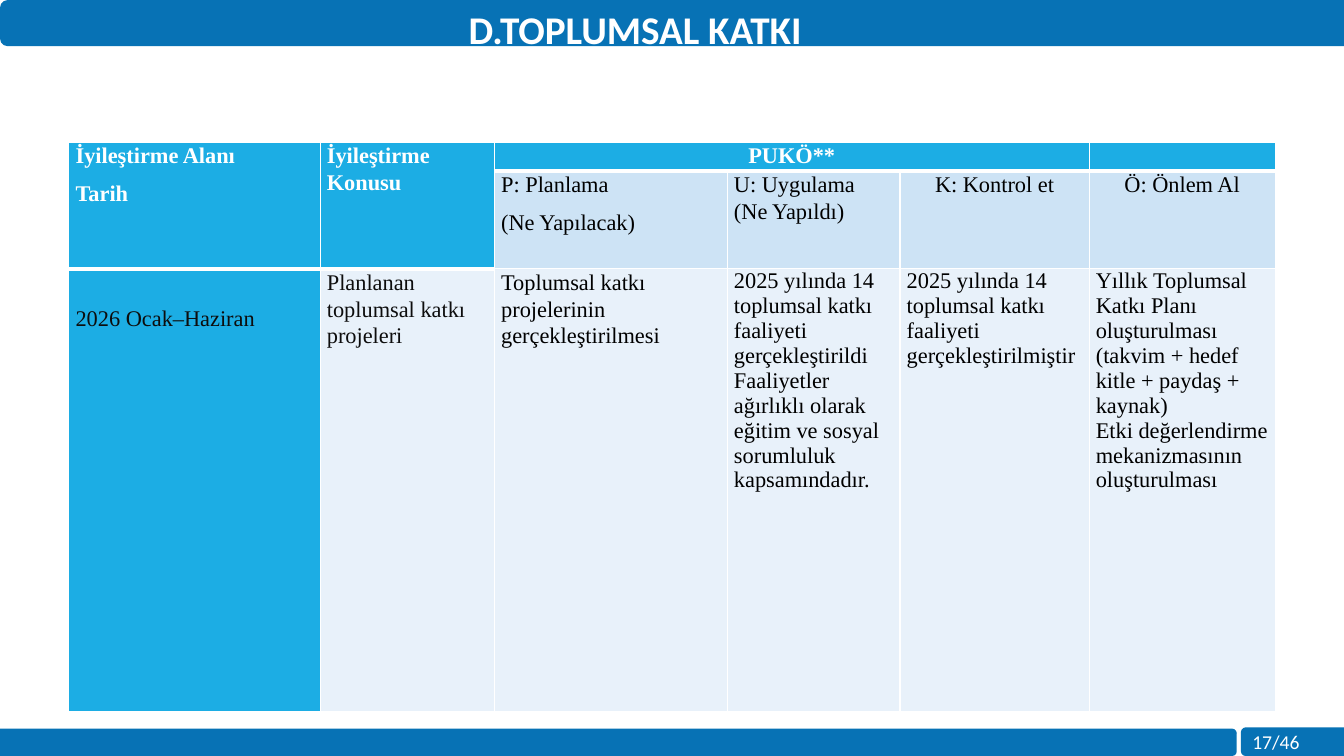
from lxml.etree import SubElement
from pptx import Presentation
from pptx.dml.color import RGBColor
from pptx.enum.shapes import MSO_SHAPE as Shape
from pptx.enum.text import MSO_ANCHOR as Anchor, MSO_AUTO_SIZE as AutoSize, PP_ALIGN as Align
from pptx.oxml.ns import qn
from pptx.util import Pt

COLORS = {"bar": "0772B5", "header": "1CADE4", "stage": "CDE3F5", "body": "E8F1FA",
          "white": "FFFFFF", "black": "000000", "date": "0D0D0D"}
COLUMN_WIDTHS = [179.5, 124.5, 166.3, 123.4, 135.1, 132.9]
ROW_HEIGHTS = [19.6, 70, 316]
PLAN = [
    [["İyileştirme Alanı", "Tarih"], ["İyileştirme Konusu"], ["PUKÖ**"], [], [], []],
    [[], [], ["P: Planlama", "(Ne Yapılacak)"], ["U: Uygulama (Ne Yapıldı)"],
     ["K: Kontrol et"], ["Ö: Önlem Al"]],
    [["2026 Ocak–Haziran"], ["Planlanan toplumsal katkı projeleri"],
     ["Toplumsal katkı projelerinin gerçekleştirilmesi"],
     ["2025 yılında 14 toplumsal katkı faaliyeti gerçekleştirildi",
      "Faaliyetler ağırlıklı olarak eğitim ve sosyal sorumluluk kapsamındadır."],
     ["2025 yılında 14 toplumsal katkı faaliyeti gerçekleştirilmiştir"],
     ["Yıllık Toplumsal Katkı Planı oluşturulması (takvim + hedef kitle + paydaş + kaynak)",
      "Etki değerlendirme mekanizmasının oluşturulması"]],
]
ALIGNMENTS = {(0, 0): Align.JUSTIFY, (0, 2): Align.CENTER,
              (1, 4): Align.CENTER, (1, 5): Align.CENTER}


def rgb(name):
    """Return the named colour."""
    return RGBColor.from_string(COLORS[name])


def style_runs(paragraph, font_name, size, color, bold=False):
    """Format every run of a paragraph."""
    for run in paragraph.runs:
        run.font.name, run.font.size, run.font.bold = font_name, Pt(size), bold
        run.font.color.rgb = rgb(color)


def add_bar(slide, left, top, width, height, rotation):
    """Add a bar rounded on the right at 90 degrees or on the left at 270."""
    bar = slide.shapes.add_shape(
        Shape.ROUND_2_SAME_RECTANGLE, Pt(left + (width - height) / 2),
        Pt(top + (height - width) / 2), Pt(height), Pt(width))
    bar.rotation = rotation
    bar.shadow.inherit = False
    bar.fill.solid()
    bar.fill.fore_color.rgb = rgb("bar")
    bar.line.fill.background()
    return bar


def add_header(slide, left, top, width, height):
    """Place the top bar and the title over it."""
    add_bar(slide, left, top, width, height, 270)
    title = slide.shapes.title
    title.left, title.top = Pt(left - 12.2), Pt(top)
    title.width, title.height = Pt(width - 28.4), Pt(41)
    slide.shapes.element.append(title.element)
    frame = title.text_frame
    frame.text = "D.TOPLUMSAL KATKI"
    frame.word_wrap = True
    frame.auto_size = AutoSize.SHAPE_TO_FIT_TEXT
    frame.vertical_anchor = Anchor.TOP
    frame.paragraphs[0].alignment = Align.CENTER
    style_runs(frame.paragraphs[0], "Calibri", 28, "white", True)


def add_footer(slide, left, top, width, height):
    """Place the bottom bar and the page number tab."""
    tab_width = 73.6
    tab_left = left + width - tab_width
    add_bar(slide, left, top + 1, tab_left - left - 3, height - 1, 90)
    add_bar(slide, tab_left, top, tab_width, height, 270)
    page = slide.shapes.add_textbox(Pt(tab_left + 1), Pt(top - 2), Pt(82.8), Pt(24.2))
    page.text_frame.word_wrap = True
    page.text_frame.text = "17/46"
    style_runs(page.text_frame.paragraphs[0], "Calibri", 14, "white")


def add_borders(cell, bottom_width):
    """Draw white borders around a cell."""
    properties = cell._tc.get_or_add_tcPr()
    for side, width in (("L", 1), ("R", 1), ("T", 1), ("B", bottom_width)):
        border = SubElement(properties, qn(f"a:ln{side}"), w=str(Pt(width)))
        SubElement(SubElement(border, qn("a:solidFill")), qn("a:srgbClr"), val=COLORS["white"])


def fill_cell(cell, row, column, lines):
    """Write and format one cell of the plan."""
    is_header = row == 0 or (row == 1 and column < 2)
    is_date = (row, column) == (2, 0)
    is_result = row == 2 and column > 2
    add_borders(cell, 3 if row == 0 else 1)
    cell.fill.solid()
    cell.fill.fore_color.rgb = rgb(
        "header" if is_header or is_date else "stage" if row == 1 else "body")
    cell.margin_left = cell.margin_right = Pt(4.8)
    cell.margin_top, cell.margin_bottom = Pt(26 if is_date else 0), Pt(0)
    cell.text_frame.text = "\n".join(lines)
    for paragraph in cell.text_frame.paragraphs:
        paragraph.alignment = ALIGNMENTS.get((row, column), Align.LEFT)
        if not lines:
            SubElement(paragraph._p, qn("a:endParaRPr"), sz="1200")
        elif not is_result:
            paragraph.line_spacing = 1.07
            paragraph.space_after = Pt(8)
        color = "white" if is_header else "date" if row == 2 and column < 2 else "black"
        style_runs(paragraph, "Times New Roman", 16, color, is_header)


def add_plan_table(slide, left, top):
    """Place the improvement plan table."""
    plan = slide.shapes.add_table(
        len(ROW_HEIGHTS), len(COLUMN_WIDTHS), Pt(left), Pt(top),
        Pt(sum(COLUMN_WIDTHS)), Pt(sum(ROW_HEIGHTS))).table
    for column, width in zip(plan.columns, COLUMN_WIDTHS):
        column.width = Pt(width)
    for row, height in zip(plan.rows, ROW_HEIGHTS):
        row.height = Pt(height)
    for row, cells in enumerate(PLAN):
        for column, lines in enumerate(cells):
            fill_cell(plan.cell(row, column), row, column, lines)
    for start, end in (((0, 0), (1, 0)), ((0, 1), (1, 1)), ((0, 2), (0, 4))):
        plan.cell(*start).merge(plan.cell(*end))


def main():
    """Build and save the slide."""
    deck = Presentation()
    deck.slide_width, deck.slide_height = Pt(960), Pt(540)
    slide = deck.slides.add_slide(deck.slide_layouts[5])
    add_footer(slide, 0, 519.5, 960, 20.5)
    add_plan_table(slide, 49.2, 101.5)
    add_header(slide, 0, 0, 960, 33)
    deck.save("out.pptx")


if __name__ == "__main__":
    main()
